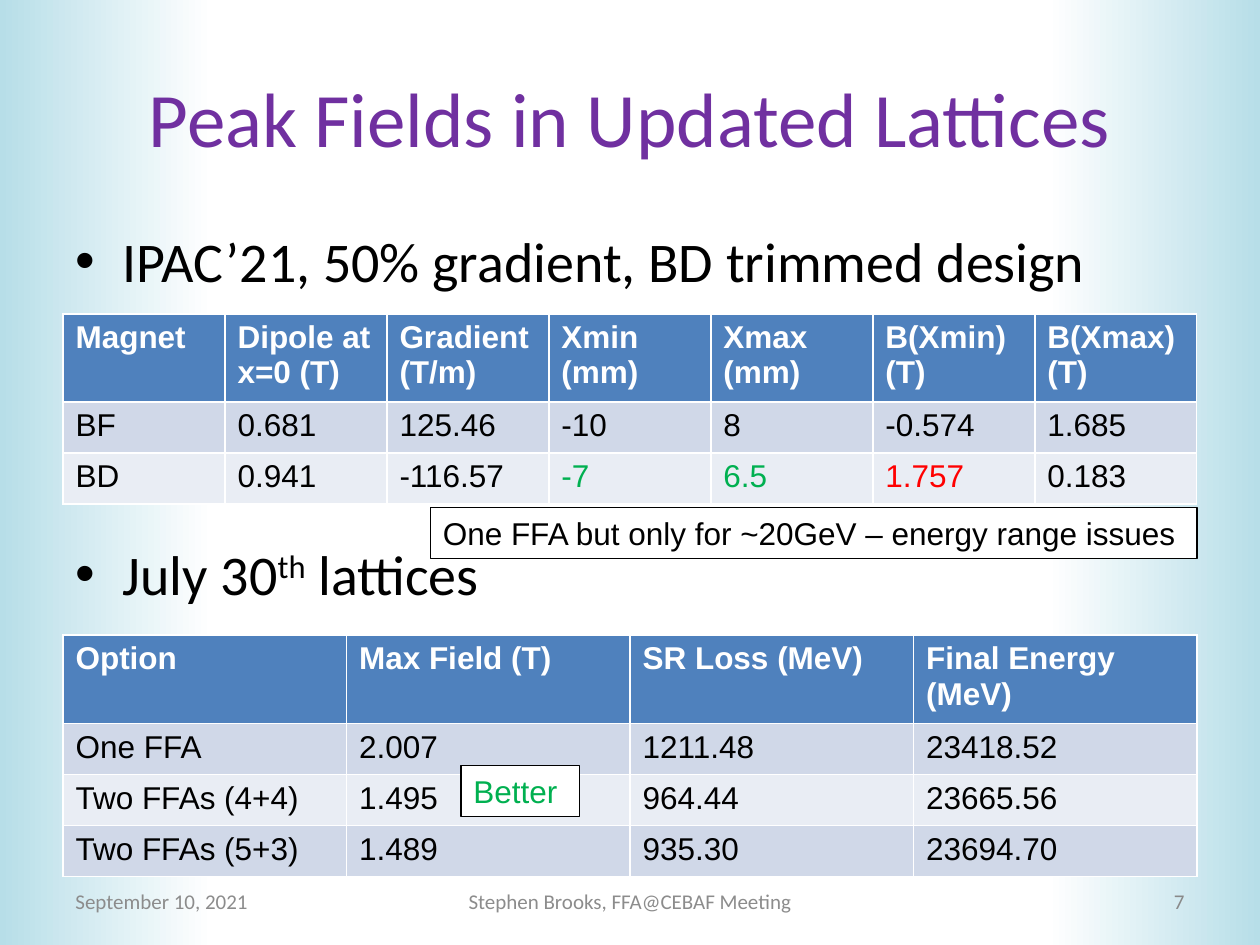
"""Build the slide on peak fields in the updated lattices."""
from dataclasses import dataclass, field

from pptx import Presentation
from pptx import util as u
from pptx.dml.color import RGBColor
from pptx.enum import shapes, text
from pptx.oxml import parse_xml
from pptx.oxml.ns import nsdecls

COLOURS = {
    "title": "7030A0",
    "ink": "000000",
    "paper": "FFFFFF",
    "edge": "B7DEE8",
    "header": "4F81BD",
    "odd": "D0D8E8",
    "even": "E9EDF4",
    "good": "00B050",
    "bad": "FF0000",
    "footer": "8C8C8C",
    "number": "898989",
}
LEFT, WIDTH = 36, 648
HEADER_HEIGHT, ROW_HEIGHT = 47.4, 29.2
ALIGN = text.PP_ALIGN
ANCHOR = text.MSO_ANCHOR


@dataclass
class Style:
    size: float
    colour: str
    font: str = "Calibri"
    bold: bool = False


@dataclass
class Label:
    words: str
    box: tuple[float, float, float, float]
    style: Style
    align: ALIGN = ALIGN.LEFT


@dataclass
class Grid:
    top: float
    rows: list[list[str]]
    accents: dict[str, str] = field(default_factory=dict)


@dataclass
class Bullet:
    runs: list[tuple[str, bool]]
    space_before: float


def rgb(colour: str) -> RGBColor:
    """Look up a named colour."""
    return RGBColor.from_string(COLOURS[colour])


def points(*lengths: float) -> list[u.Length]:
    """Convert lengths to points."""
    return [u.Pt(length) for length in lengths]


def add_run(paragraph, words: str, style: Style):
    """Append one styled run and return it."""
    run = paragraph.add_run()
    run.text = words
    run.font.size = u.Pt(style.size)
    run.font.name = style.font
    run.font.bold = style.bold
    run.font.color.rgb = rgb(style.colour)
    return run


def draw_edge(slide, left: float, rotation: float) -> None:
    """Draw a side band fading towards the middle of the slide."""
    band = slide.shapes.add_shape(
        shapes.MSO_SHAPE.RECTANGLE, *points(left, 0, 121.7, 540))
    band.shadow.inherit = False
    band.rotation = rotation
    band.line.fill.background()
    band.fill.gradient()
    band.fill.gradient_angle = 0
    for stop, colour in zip(band.fill.gradient_stops, ("edge", "paper")):
        stop.color.rgb = rgb(colour)


def draw_label(slide, label: Label) -> None:
    """Draw one line of text centred vertically in its box."""
    frame = slide.shapes.add_textbox(*points(*label.box)).text_frame
    frame.word_wrap = True
    frame.vertical_anchor = ANCHOR.MIDDLE
    frame.paragraphs[0].alignment = label.align
    add_run(frame.paragraphs[0], label.words, label.style)


def draw_bullets(slide, bullets: list[Bullet]) -> None:
    """Draw the bulleted headings above the tables."""
    frame = slide.shapes.add_textbox(*points(LEFT, 126, WIDTH, 356.4)).text_frame
    frame.word_wrap = True
    for index, bullet in enumerate(bullets):
        paragraph = frame.add_paragraph() if index else frame.paragraphs[0]
        paragraph.space_before = u.Pt(bullet.space_before)
        properties = paragraph._p.get_or_add_pPr()
        properties.set("marL", str(u.Pt(27)))
        properties.set("indent", str(u.Pt(-27)))
        for tag in ('buFont typeface="Arial"', 'buChar char="•"'):
            properties.append(parse_xml(f"<a:{tag} {nsdecls('a')}/>"))
        for words, raised in bullet.runs:
            run = add_run(paragraph, words, Style(32, "ink"))
            if raised:
                run.font._element.set("baseline", "30000")


def draw_grid(slide, grid: Grid) -> None:
    """Draw a table with a header row and alternating row fills."""
    count, columns = len(grid.rows), len(grid.rows[0])
    height = HEADER_HEIGHT + ROW_HEIGHT * (count - 1)
    table = slide.shapes.add_table(
        count, columns, *points(LEFT, grid.top, WIDTH, height)).table
    for column in table.columns:
        column.width = u.Pt(WIDTH / columns)
    for index, values in enumerate(grid.rows):
        is_header = index == 0
        table.rows[index].height = u.Pt(HEADER_HEIGHT if is_header else ROW_HEIGHT)
        fill = "header" if is_header else ("even", "odd")[index % 2]
        for cell, value in zip(table.rows[index].cells, values):
            cell.fill.solid()
            cell.fill.fore_color.rgb = rgb(fill)
            colour = "paper" if is_header else grid.accents.get(value, "ink")
            add_run(cell.text_frame.paragraphs[0], value,
                    Style(18, colour, "Arial", is_header))


def draw_callout(slide, label: Label) -> None:
    """Draw a bordered white note."""
    note = slide.shapes.add_shape(
        shapes.MSO_SHAPE.RECTANGLE, *points(*label.box))
    note.shadow.inherit = False
    note.fill.solid()
    note.fill.fore_color.rgb = rgb("paper")
    note.line.color.rgb = rgb("ink")
    note.line.width = u.Pt(0.75)
    frame = note.text_frame
    frame.word_wrap = True
    frame.vertical_anchor = ANCHOR.TOP
    frame.paragraphs[0].alignment = label.align
    add_run(frame.paragraphs[0], label.words, label.style)


LABELS = [
    Label("Peak Fields in Updated Lattices", (LEFT, 21.6, WIDTH, 90),
          Style(44, "title"), ALIGN.CENTER),
    Label("September 10, 2021", (LEFT, 500.5, 168, 28.75), Style(12, "footer")),
    Label("Stephen Brooks, FFA@CEBAF Meeting", (246, 500.5, 228, 28.75),
          Style(12, "footer"), ALIGN.CENTER),
    Label("7", (516, 500.5, 168, 28.75), Style(12, "number"), ALIGN.RIGHT),
]
BULLETS = [
    Bullet([("IPAC’21, 50% gradient, BD trimmed design", False)], 0),
    Bullet([("July 30", False), ("th", True), (" lattices", False)], 140.4),
]
GRIDS = [
    Grid(362.9, [
        ["Option", "Max Field (T)", "SR Loss (MeV)", "Final Energy (MeV)"],
        ["One FFA", "2.007", "1211.48", "23418.52"],
        ["Two FFAs (4+4)", "1.495", "964.44", "23665.56"],
        ["Two FFAs (5+3)", "1.489", "935.30", "23694.70"],
    ]),
    Grid(179.3, [
        ["Magnet", "Dipole at x=0 (T)", "Gradient (T/m)", "Xmin (mm)",
         "Xmax (mm)", "B(Xmin) (T)", "B(Xmax) (T)"],
        ["BF", "0.681", "125.46", "-10", "8", "-0.574", "1.685"],
        ["BD", "0.941", "-116.57", "-7", "6.5", "1.757", "0.183"],
    ], {"-7": "good", "6.5": "good", "1.757": "bad"}),
]
CALLOUTS = [
    Label("One FFA but only for ~20GeV – energy range issues",
          (246, 290, 438, 29.1), Style(18, "ink", "Arial")),
    Label("Better", (263.5, 437.6, 67.7, 29.1), Style(18, "good", "Arial")),
]


def main() -> None:
    """Draw the slide and save it."""
    deck = Presentation()
    deck.slide_width, deck.slide_height = points(720, 540)
    slide = deck.slides.add_slide(deck.slide_layouts[6])
    draw_edge(slide, 598.3, 180)
    draw_edge(slide, 0, 0)
    for label in LABELS:
        draw_label(slide, label)
    draw_bullets(slide, BULLETS)
    for grid in GRIDS:
        draw_grid(slide, grid)
    for callout in CALLOUTS:
        draw_callout(slide, callout)
    deck.save("out.pptx")


if __name__ == "__main__":
    main()
